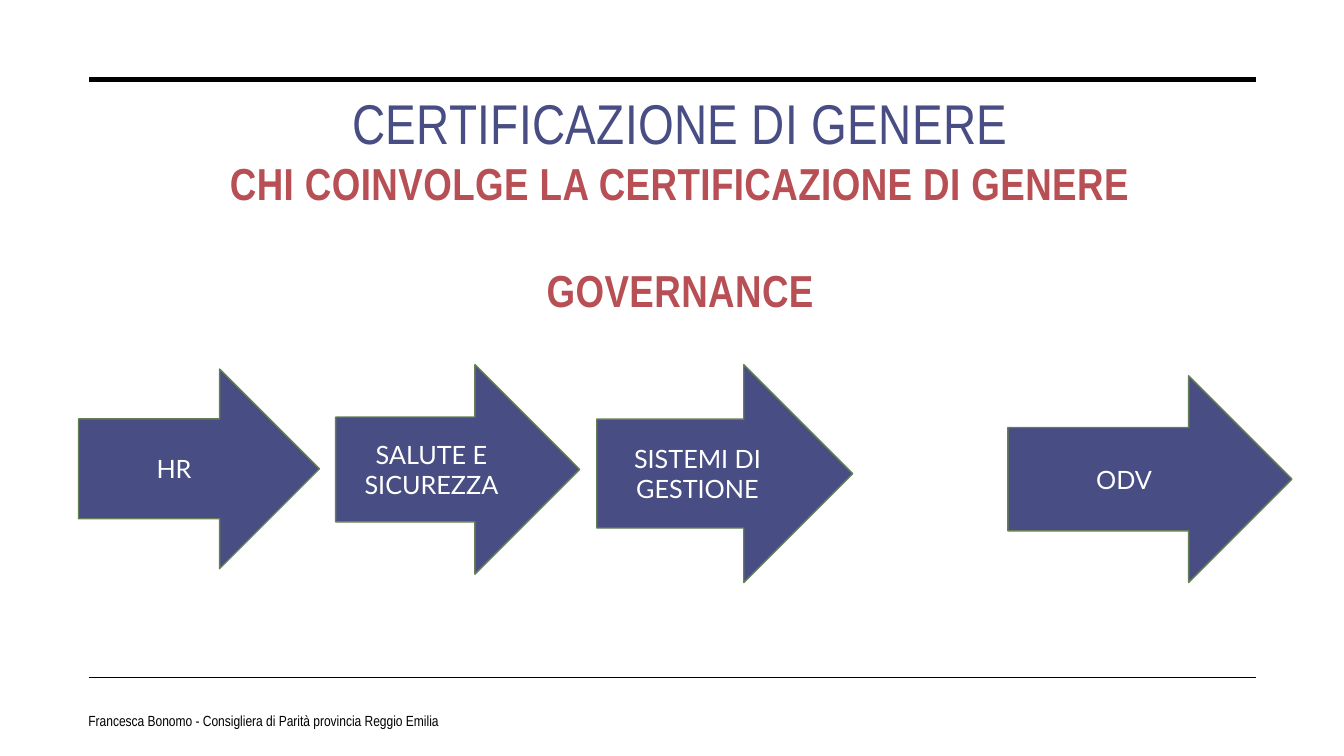
from lxml import etree
from pptx import Presentation
from pptx import util as u
from pptx.dml.color import RGBColor
from pptx.enum import shapes, text
from pptx.oxml.ns import qn

HUES = {"blue": "484E83", "red": "B74F54", "green": "657F56",
        "black": "000000", "white": "FFFFFF"}
NARROW = "Arial Narrow"
ARROWS = [
    ("HR", 1.98, 9.3, 6.07, 5.03),
    ("SALUTE E SICUREZZA", 8.46, 9.19, 6.15, 5.28),
    ("SISTEMI DI GESTIONE", 15.04, 9.19, 6.45, 5.49),
    ("ODV", 25.4, 9.47, 7.16, 5.21),
]


def hue(name):
    return RGBColor.from_string(HUES[name])


def write(para, words, size, color, font=NARROW, bold=False, track=0,
          align=text.PP_ALIGN.CENTER, before=0, after=0):
    """Put formatted words in a paragraph; track is in hundredths of a point."""
    para.alignment = align
    para.space_before = u.Pt(before)
    para.space_after = u.Pt(after)
    run = para.add_run()
    run.text = words
    run.font.name = font
    run.font.size = u.Pt(size)
    run.font.bold = bold
    run.font.color.rgb = hue(color)
    if track:
        run.font._element.set("spc", str(track))


def add_head(slide):
    title = slide.shapes.title
    title.left, title.top = u.Cm(1.04), u.Cm(2.11)
    title.width, title.height = u.Cm(32.21), u.Cm(9.86)
    frame = title.text_frame
    frame.auto_size = text.MSO_AUTO_SIZE.NONE
    frame.vertical_anchor = text.MSO_ANCHOR.TOP
    frame.word_wrap = True
    write(frame.paragraphs[0], "CERTIFICAZIONE DI GENERE", 40, "blue",
          track=30)
    for words, gap in (("CHI COINVOLGE LA CERTIFICAZIONE DI GENERE", 0),
                       ("GOVERNANCE", 38)):
        write(frame.add_paragraph(), words, 32, "red", bold=True, track=30,
              before=gap)


def add_rule(slide, y, weight):
    rule = slide.shapes.add_connector(
        shapes.MSO_CONNECTOR.STRAIGHT,
        u.Cm(2.24), u.Cm(y), u.Cm(31.65), u.Cm(y))
    rule.line.color.rgb = hue("black")
    rule.line.width = u.Pt(weight)
    etree.SubElement(rule._element.spPr, qn("a:effectLst"))


def add_foot(slide):
    box = slide.shapes.add_textbox(u.Cm(1.98), u.Cm(17.65),
                                   u.Cm(12.6), u.Cm(1.02))
    frame = box.text_frame
    frame.word_wrap = True
    frame.vertical_anchor = text.MSO_ANCHOR.MIDDLE
    write(frame.paragraphs[0],
          "Francesca Bonomo - Consigliera di Parità provincia Reggio Emilia",
          10.5, "black", align=text.PP_ALIGN.LEFT, after=6)


def add_arrow(slide, words, *place):
    arrow = slide.shapes.add_shape(shapes.MSO_SHAPE.RIGHT_ARROW,
                                   *(u.Cm(n) for n in place))
    arrow.shadow.inherit = False
    arrow.fill.solid()
    arrow.fill.fore_color.rgb = hue("blue")
    arrow.line.color.rgb = hue("green")
    arrow.line.width = u.Pt(1)
    frame = arrow.text_frame
    frame.word_wrap = True
    frame.vertical_anchor = text.MSO_ANCHOR.MIDDLE
    write(frame.paragraphs[0], words, 18, "white", font="Lato")


def main():
    deck = Presentation()
    deck.slide_width, deck.slide_height = u.Cm(33.87), u.Cm(19.05)
    slide = deck.slides.add_slide(deck.slide_layouts.get_by_name("Title Only"))
    add_head(slide)
    add_rule(slide, 2.01, 3.5)
    add_rule(slide, 17.07, 1)
    add_foot(slide)
    for arrow in ARROWS:
        add_arrow(slide, *arrow)
    deck.save("out.pptx")


if __name__ == "__main__":
    main()
